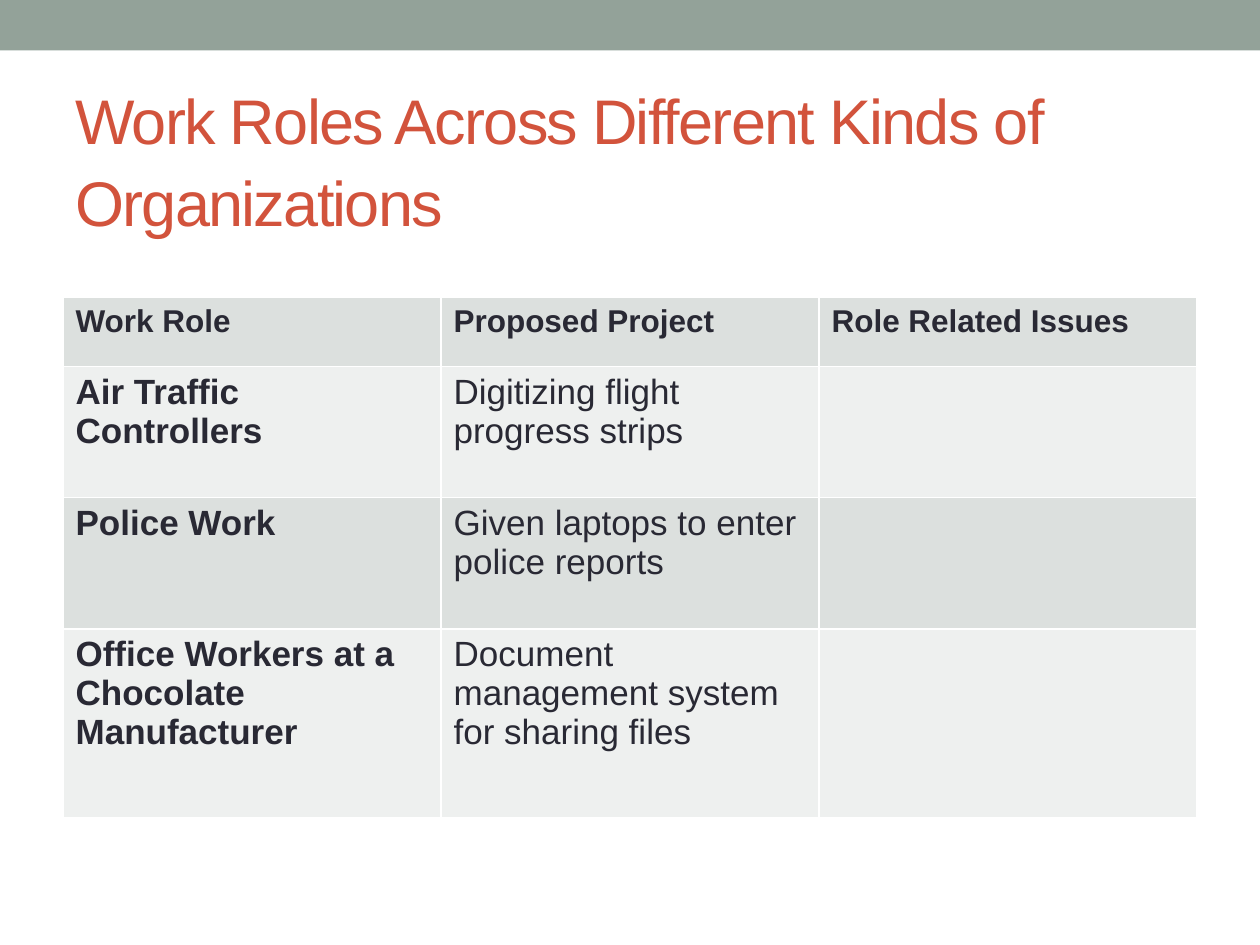
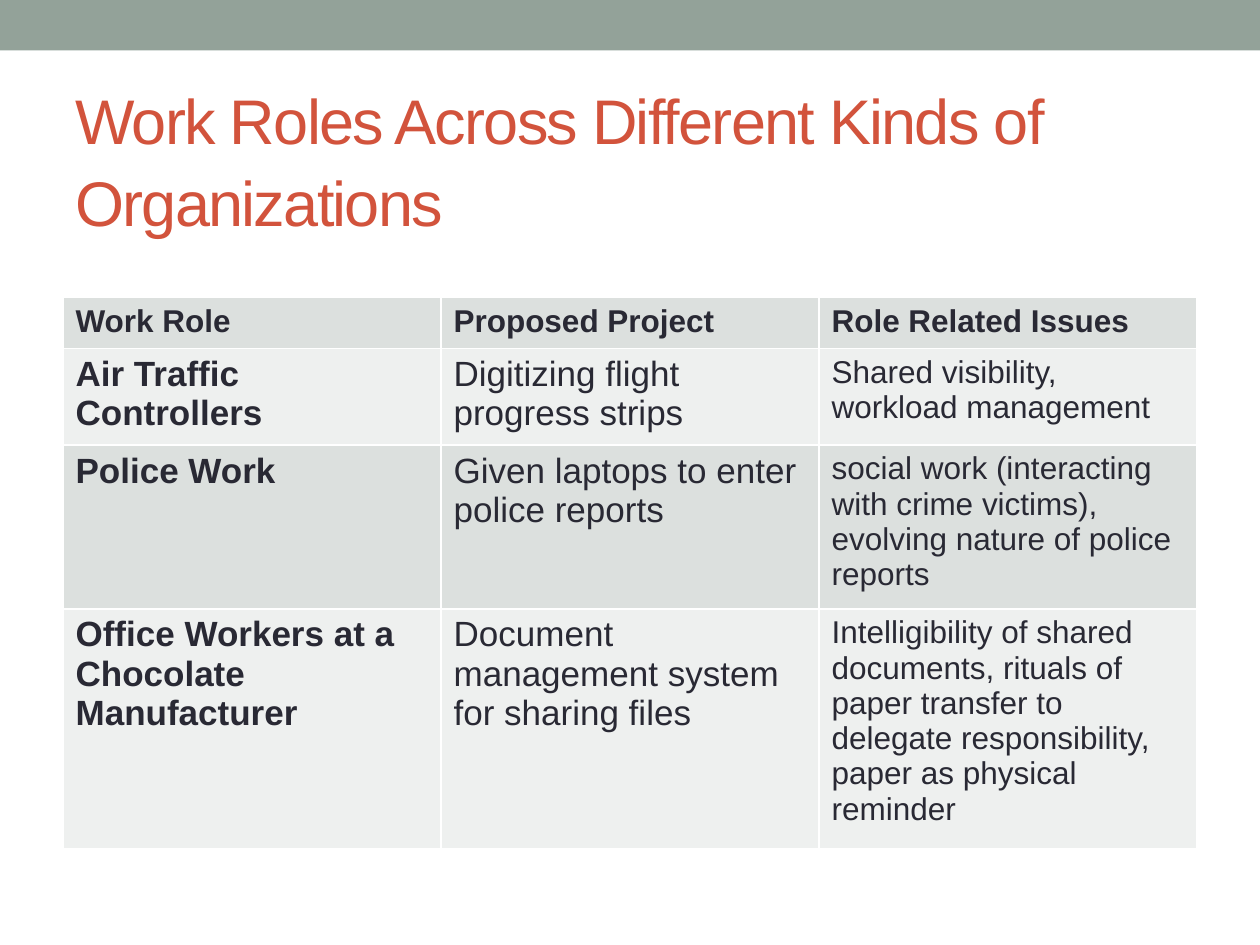
"""Build two slides on work roles: the projects first, then the issues they raise."""
import pptx
import pptx.dml.color
import pptx.enum.shapes
import pptx.enum.text
import pptx.oxml
import pptx.oxml.ns
import pptx.util
from lxml import etree

Pt = pptx.util.Pt
COLORS = {"band": "93A299", "title": "D2533C", "text": "292934",
          "dark_row": "DCE0DE", "light_row": "EEF0EF", "grid": "FFFFFF"}
TITLE = "Work Roles Across Different Kinds of Organizations"
HEADINGS = ["Work Role", "Proposed Project", "Role Related Issues"]
PROJECTS = [
    ("Air Traffic Controllers", "Digitizing flight progress strips"),
    ("Police Work", "Given laptops to enter police reports"),
    ("Office Workers at a Chocolate Manufacturer", "Document management system for sharing files"),
]
ISSUES = [
    "Shared visibility, workload management",
    "social work (interacting with crime victims), evolving nature of police reports",
    "Intelligibility of shared documents, rituals of paper transfer to delegate "
    "responsibility, paper as physical reminder",
]
STAGES = [
    {"issues": ["", "", ""], "row_heights": [39.6, 74.9, 74.9, 108]},
    {"issues": ISSUES, "row_heights": [29.2] * 4},
]


def rgb(name):
    return pptx.dml.color.RGBColor.from_string(COLORS[name])


def write(frame, text, size=18, color="text", bold=False, tracking=0, line_spacing=None):
    paragraph = frame.paragraphs[0]
    paragraph.line_spacing = line_spacing
    run = paragraph.add_run()
    run.text = text
    run.font.name = "Arial"
    run.font.size = Pt(size)
    run.font.bold = bold
    run.font.color.rgb = rgb(color)
    if tracking:
        run.font._element.set("spc", str(round(tracking * 100)))


deck = pptx.Presentation()
deck.slide_width, deck.slide_height = Pt(720), Pt(540)

for stage in STAGES:
    slide = deck.slides.add_slide(deck.slide_layouts[6])

    band = slide.shapes.add_shape(pptx.enum.shapes.MSO_SHAPE.RECTANGLE, 0, 0, Pt(720), Pt(28.8))
    band.shadow.inherit = False
    band.fill.solid()
    band.fill.fore_color.rgb = rgb("band")
    band.line.fill.background()

    title = slide.shapes.add_textbox(Pt(36), Pt(41.8), Pt(648), Pt(96.5)).text_frame
    title.word_wrap = True
    title.vertical_anchor = pptx.enum.text.MSO_ANCHOR.MIDDLE
    write(title, TITLE, size=36, color="title", tracking=-1, line_spacing=1.08)

    entries = [HEADINGS] + [[*project, issue] for project, issue in zip(PROJECTS, stage["issues"])]
    heights = stage["row_heights"]
    roles = slide.shapes.add_table(len(entries), len(HEADINGS), Pt(36), Pt(169.9),
                                   Pt(648), Pt(sum(heights))).table
    for row, (height, entry) in enumerate(zip(heights, entries)):
        roles.rows[row].height = Pt(height)
        for column, text in enumerate(entry):
            cell = roles.cell(row, column)
            if text:
                write(cell.text_frame, text, size=18 if row == 0 or column == 2 else 20,
                      bold=row == 0 or column == 0)
            cell.fill.solid()
            cell.fill.fore_color.rgb = rgb("light_row" if row % 2 else "dark_row")
            properties = cell._tc.get_or_add_tcPr()
            for position, side in enumerate(["lnL", "lnR", "lnT", "lnB"]):
                border = pptx.oxml.parse_xml(
                    f'<a:{side} {pptx.oxml.ns.nsdecls("a")} w="{Pt(1)}"/>')
                fill = etree.SubElement(border, pptx.oxml.ns.qn("a:solidFill"))
                etree.SubElement(fill, pptx.oxml.ns.qn("a:srgbClr"), val=COLORS["grid"])
                properties.insert(position, border)

deck.save("out.pptx")
